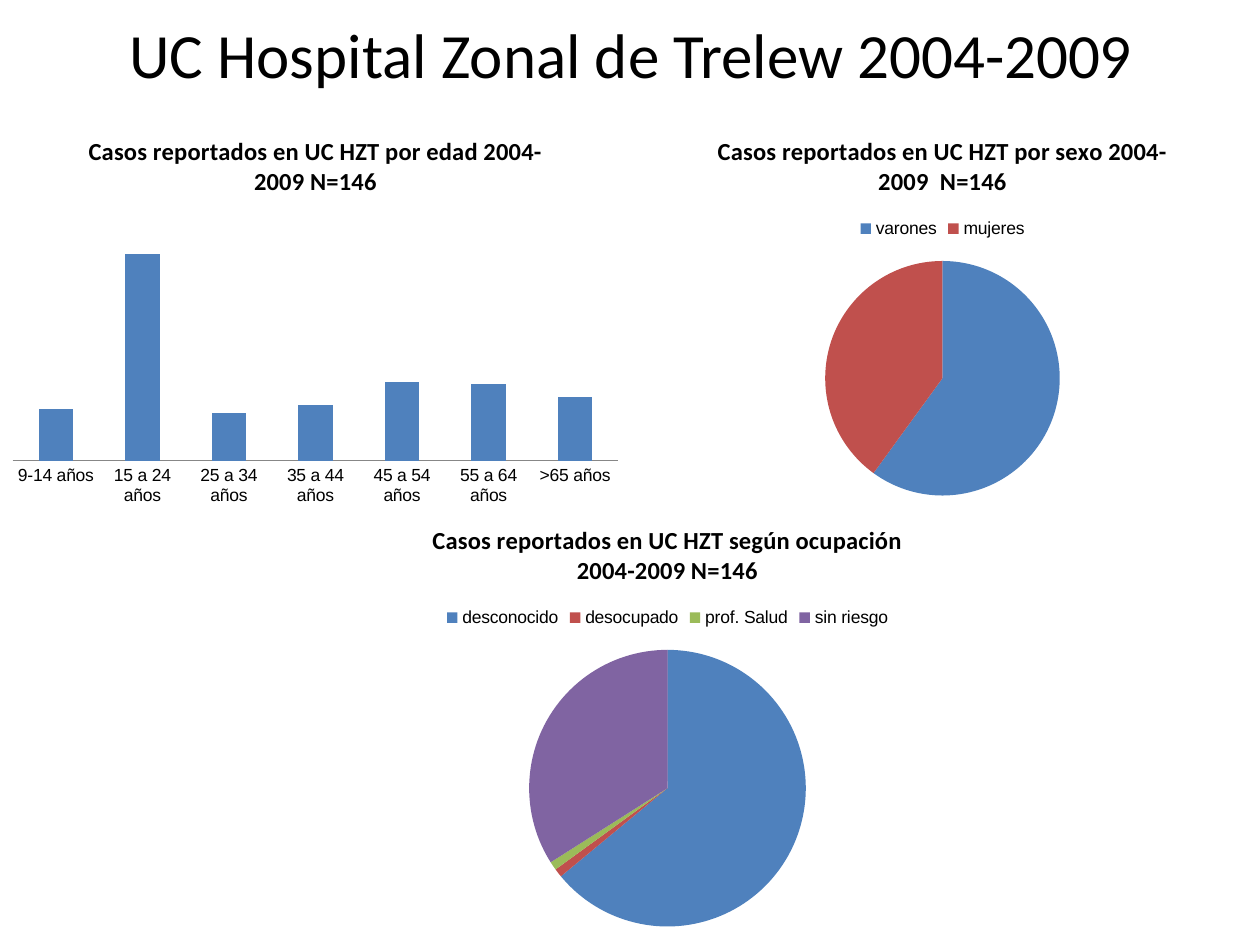
from dataclasses import dataclass

import pptx
import pptx.chart.data
import pptx.dml.color
import pptx.enum.chart
import pptx.enum.text
import pptx.oxml
import pptx.oxml.ns
import pptx.util

SCALE = 914400 / 126
KIND = pptx.enum.chart.XL_CHART_TYPE
BLUE, RED, GREEN, PURPLE = "4F81BD", "C0504D", "9BBB59", "8064A2"


@dataclass
class Panel:
    title: str
    box: tuple[int, int, int, int]
    cats: list[str]
    vals: list[int]
    hues: list[str]
    kind: KIND = KIND.PIE


PANELS = [
    Panel("Casos reportados en UC HZT por edad 2004-2009 N=146",
          (0, 115, 631, 398),
          ["9-14 años", "15 a 24 años", "25 a 34 años", "35 a 44 años",
           "45 a 54 años", "55 a 64 años", ">65 años"],
          [25, 100, 23, 27, 38, 37, 31], [BLUE], KIND.COLUMN_CLUSTERED),
    Panel("Casos reportados en UC HZT por sexo 2004-2009  N=146",
          (629, 115, 627, 398), ["varones", "mujeres"], [60, 40], [BLUE, RED]),
    Panel("Casos reportados en UC HZT según ocupación 2004-2009 N=146",
          (352, 503, 631, 441),
          ["desconocido", "desocupado", "prof. Salud", "sin riesgo"],
          [64, 1, 1, 34], [BLUE, RED, GREEN, PURPLE]),
]


def px(num: int) -> int:
    return pptx.util.Emu(round(num * SCALE))


def color(code: str) -> pptx.dml.color.RGBColor:
    return pptx.dml.color.RGBColor.from_string(code)


def style(font, size: int, name: str, bold: bool = False) -> None:
    font.size = pptx.util.Pt(size)
    font.name = name
    font.bold = bold
    font.color.rgb = color("000000")


def paint(fill, code: str) -> None:
    fill.solid()
    fill.fore_color.rgb = color(code)


def add_title(slide, text: str) -> None:
    title = slide.shapes.title
    title.left, title.top, title.width, title.height = map(px, (64, 0, 1134, 106))
    frame = title.text_frame
    frame.auto_size = pptx.enum.text.MSO_AUTO_SIZE.NONE
    frame.vertical_anchor = pptx.enum.text.MSO_ANCHOR.MIDDLE
    para = frame.paragraphs[0]
    para.alignment = pptx.enum.text.PP_ALIGN.CENTER
    run = para.add_run()
    run.text = text
    style(run.font, 36, "Calibri")


def fill_plot(chart, code: str) -> None:
    area = chart.element.find(".//" + pptx.oxml.ns.qn("c:plotArea"))
    area.append(pptx.oxml.parse_xml(
        f'<c:spPr {pptx.oxml.ns.nsdecls("c", "a")}><a:solidFill>'
        f'<a:srgbClr val="{code}"/></a:solidFill></c:spPr>'))


def set_axes(chart) -> None:
    cat, val = chart.category_axis, chart.value_axis
    cat.major_tick_mark = pptx.enum.chart.XL_TICK_MARK.NONE
    cat.format.line.color.rgb = color("878787")
    cat.format.line.width = pptx.util.Pt(0.75)
    val.visible = False
    val.has_major_gridlines = False
    val.minimum_scale, val.maximum_scale = 0, 120


def add_panel(slide, panel: Panel) -> None:
    data = pptx.chart.data.CategoryChartData()
    data.categories = panel.cats
    data.add_series("Series 1", panel.vals)
    chart = slide.shapes.add_chart(panel.kind, *map(px, panel.box), data).chart
    style(chart.font, 10, "Arial")
    chart.has_title = True
    run = chart.chart_title.text_frame.paragraphs[0].add_run()
    run.text = panel.title
    style(run.font, 14, "Calibri", True)
    plot = chart.plots[0]
    series = plot.series[0]
    pie = panel.kind == KIND.PIE
    plot.vary_by_categories = pie
    chart.has_legend = pie
    if pie:
        chart.legend.position = pptx.enum.chart.XL_LEGEND_POSITION.TOP
        chart.legend.include_in_layout = False
        for spot, hue in enumerate(panel.hues):
            paint(series.points[spot].format.fill, hue)
    else:
        plot.gap_width = 150
        paint(series.format.fill, panel.hues[0])
        set_axes(chart)
    fill_plot(chart, "FFFFFF")


def main() -> None:
    deck = pptx.Presentation()
    deck.slide_width, deck.slide_height = px(1260), px(945)
    slide = deck.slides.add_slide(deck.slide_layouts[5])
    add_title(slide, "UC Hospital Zonal de Trelew 2004-2009")
    for panel in PANELS:
        add_panel(slide, panel)
    deck.save("out.pptx")


if __name__ == "__main__":
    main()
